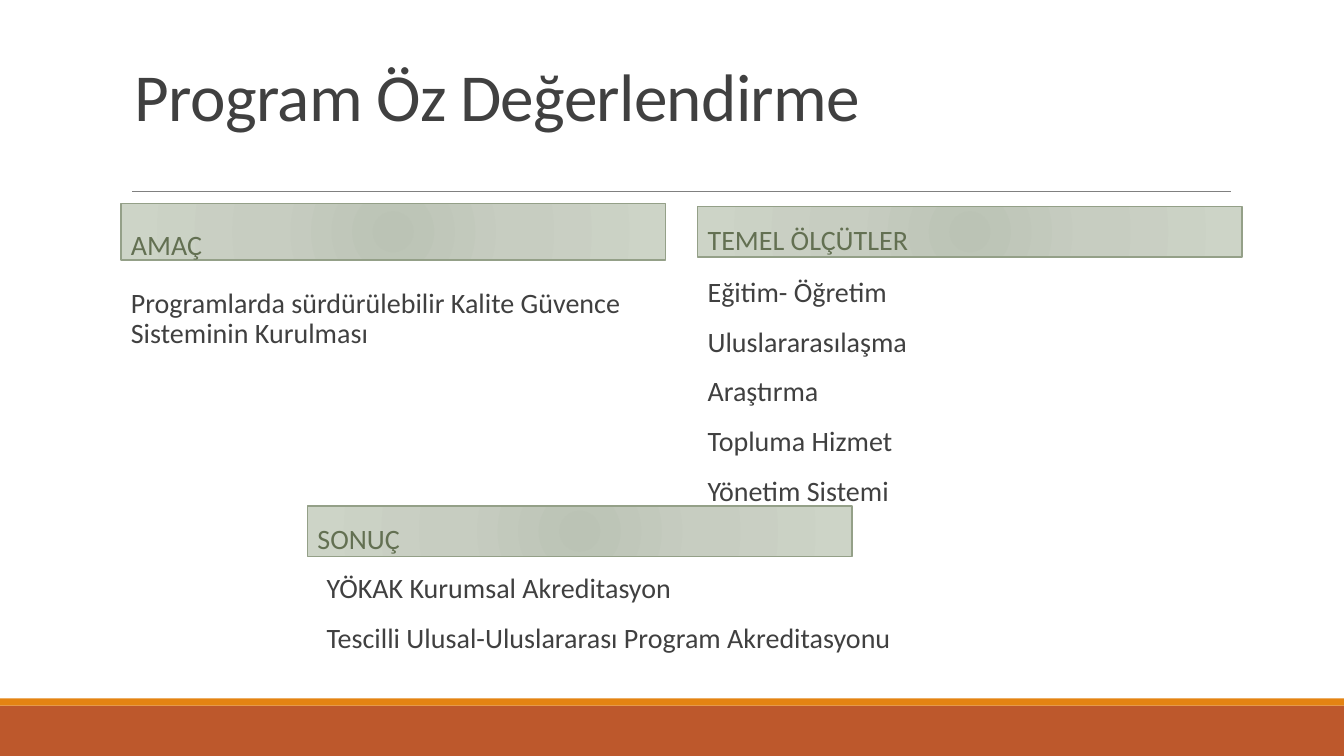
import pptx
import pptx.dml.color
import pptx.enum.shapes
import pptx.enum.text
import pptx.oxml
import pptx.oxml.ns
import pptx.util
from pptx.util import Inches

RGBColor = pptx.dml.color.RGBColor
Anchor = pptx.enum.text.MSO_ANCHOR
RUST = RGBColor(0xBD, 0x58, 0x2C)
ORANGE = RGBColor(0xE4, 0x83, 0x12)
GREY = RGBColor(0x80, 0x80, 0x80)
INK = RGBColor(0x40, 0x40, 0x40)
OLIVE = RGBColor(0x63, 0x70, 0x52)
SAGE_LINE = RGBColor(0x94, 0xA0, 0x88)
SAGE_STOPS = (
    (0, RGBColor(0xBB, 0xC3, 0xB5)),
    (45, RGBColor(0xC7, 0xCD, 0xC1)),
    (100, RGBColor(0xCD, 0xD4, 0xC7)),
)


def write_text(s, text, size=20, color=INK, anchor=Anchor.TOP, line=0.9,
               before=12, after=2, top=0.05, bottom=0.05, tracking=None):
    """Write one paragraph per line of text into a shape."""
    tf = s.text_frame
    tf.word_wrap = True
    tf.vertical_anchor = anchor
    tf.margin_left = tf.margin_right = Inches(0.1)
    tf.margin_top, tf.margin_bottom = Inches(top), Inches(bottom)
    for i, words in enumerate(text.split("\n")):
        p = tf.add_paragraph() if i else tf.paragraphs[0]
        p.alignment = pptx.enum.text.PP_ALIGN.LEFT
        p.line_spacing = line
        p.space_before = pptx.util.Pt(before)
        p.space_after = pptx.util.Pt(after)
        r = p.add_run()
        r.text = words
        r.font.name = "Calibri"
        r.font.size = pptx.util.Pt(size)
        r.font.color.rgb = color
        if tracking is not None:
            r.font._element.set("spc", str(round(tracking * 100)))


def add_rect(slide, x, y, w, h):
    """Add a rectangle without shadow."""
    s = slide.shapes.add_shape(pptx.enum.shapes.MSO_SHAPE.RECTANGLE,
                               Inches(x), Inches(y), Inches(w), Inches(h))
    s.shadow.inherit = False
    return s


def add_band(slide, y, h, color):
    """Add a plain band across the slide."""
    s = add_rect(slide, 0, y, 13.33, h)
    s.fill.solid()
    s.fill.fore_color.rgb = color
    s.line.fill.background()


def add_rule(slide, x1, x2, y):
    """Add the thin line under the title."""
    s = slide.shapes.add_connector(pptx.enum.shapes.MSO_CONNECTOR.STRAIGHT,
                                   Inches(x1), Inches(y), Inches(x2), Inches(y))
    s.line.color.rgb = GREY
    s.line.width = pptx.util.Pt(0.5)
    s._element.spPr.append(pptx.oxml.parse_xml(
        f'<a:effectLst {pptx.oxml.ns.nsdecls("a")}/>'))


def fill_radial(s, stops):
    """Fill a shape with a circular gradient."""
    s.fill.background()
    spPr = s._element.spPr
    stop_xml = "".join(
        f'<a:gs pos="{pos * 1000}"><a:srgbClr val="{color}"/></a:gs>'
        for pos, color in stops)
    spPr.replace(spPr.find(pptx.oxml.ns.qn("a:noFill")), pptx.oxml.parse_xml(
        f'<a:gradFill {pptx.oxml.ns.nsdecls("a")} rotWithShape="1">'
        f'<a:gsLst>{stop_xml}</a:gsLst><a:path path="circle">'
        '<a:fillToRect l="100000" t="100000" r="100000" b="100000"/>'
        '</a:path></a:gradFill>'))


def add_heading(slide, text, x, y, h=0.5, bottom=0.02):
    """Add a sage section heading."""
    s = add_rect(slide, x, y, 5.4, h)
    fill_radial(s, SAGE_STOPS)
    s.line.color.rgb = SAGE_LINE
    s.line.width = pptx.util.Pt(1)
    write_text(s, text, color=OLIVE, anchor=Anchor.BOTTOM, line=0.7,
               before=0, after=0, top=0, bottom=bottom)


def add_text(slide, text, x, y, w, h, **fmt):
    """Add a text box."""
    s = slide.shapes.add_textbox(Inches(x), Inches(y), Inches(w), Inches(h))
    write_text(s, text, **fmt)


def main():
    """Build the slide and save it."""
    prs = pptx.Presentation()
    prs.slide_width, prs.slide_height = Inches(13.33), Inches(7.5)
    slide = prs.slides.add_slide(prs.slide_layouts[6])
    add_band(slide, 7, 0.5, RUST)
    add_band(slide, 6.93, 0.07, ORANGE)
    add_rule(slide, 1.31, 12.21, 1.9)
    add_text(slide, "Program Öz Değerlendirme", 1.24, -0.2, 11, 1.59, size=48,
             anchor=Anchor.BOTTOM, line=0.85, before=0, after=0, tracking=-0.5)
    add_heading(slide, "AMAÇ", 1.2, 2.02, h=0.56, bottom=0)
    add_text(slide, "Programlarda sürdürülebilir Kalite Güvence Sisteminin Kurulması",
             1.2, 2.82, 5.4, 1.13)
    add_heading(slide, "TEMEL ÖLÇÜTLER", 6.92, 2.05)
    add_text(slide, "Eğitim- Öğretim\nUluslararasılaşma\nAraştırma\n"
             "Topluma Hizmet\nYönetim Sistemi", 6.92, 2.71, 5.4, 2.6)
    add_heading(slide, "SONUÇ", 3.05, 5.02)
    add_text(slide, "YÖKAK Kurumsal Akreditasyon\n"
             "Tescilli Ulusal-Uluslararası Program Akreditasyonu",
             3.14, 5.65, 5.89, 1.13)
    prs.save("out.pptx")


if __name__ == "__main__":
    main()
